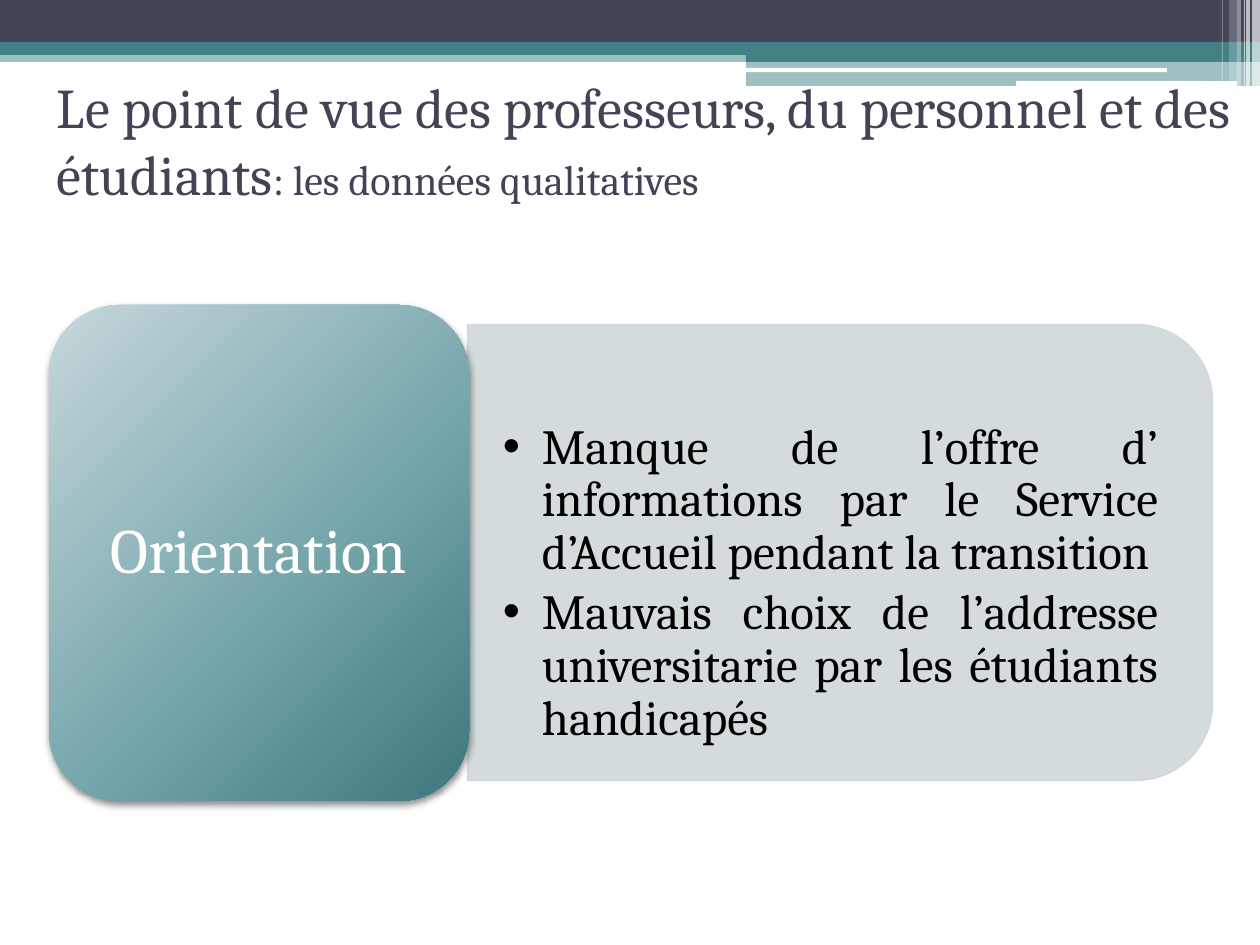
from pptx import Presentation
from pptx.dml.color import RGBColor
from pptx.enum.shapes import MSO_SHAPE as Shape
from pptx.enum.text import MSO_ANCHOR as Anchor, MSO_AUTO_SIZE as AutoSize, PP_ALIGN as Align
from pptx.oxml import parse_xml
from pptx.oxml.ns import nsdecls, qn
from pptx.util import Emu, Pt
from lxml.etree import SubElement

EMU_PER_PX = 914400 / 126
FONT = "Cambria"
NAVY = RGBColor(0x42, 0x44, 0x56)
TEAL = RGBColor(0x43, 0x80, 0x86)
MIST = RGBColor(0xCF, 0xD8, 0xD9)
WHITE = RGBColor(0xFF, 0xFF, 0xFF)
BLACK = RGBColor(0, 0, 0)

TITLE = [("Le point de vue des professeurs, du personnel et des étudiants", 32),
         (": les données qualitatives", 24)]
TOPIC = "Orientation"
FINDINGS = ["Manque de l’offre d’ informations par le Service d’Accueil pendant la transition",
            "Mauvais choix de l’addresse universitarie par les étudiants handicapés"]

# box in px, colour, opacity in percent
BANDS = [((0, 50, 1260, 12), TEAL, 50),
         ((0, 0, 1260, 42), NAVY, 100),
         ((0, 42, 1260, 13), TEAL, 100),
         ((746, 49, 514, 13), TEAL, 100),
         ((746, 61, 514, 25), TEAL, 50)]
RULES = [(745, 68, 422, 4), (1016, 81, 221, 5)]
# left, width, height in px, opacity in percent
STRIPES = [(1252, 8, 86, 65), (1246, 4, 86, 65), (1244, 1, 86, 60),
           (1237, 4, 86, 40), (1229, 8, 81, 20), (1222, 1, 81, 30)]
CARD_STOPS = [(0, "C7D7DA"), (55, "77A7AD"), (100, "3E777D")]


def px(length):
    return Emu(round(length * EMU_PER_PX))


def place(item, box):
    item.left, item.top, item.width, item.height = map(px, box)


def set_opacity(color_format, percent):
    """Add an alpha value to the solid colour inside a fill element."""
    color = color_format.find(".//" + qn("a:srgbClr"))
    SubElement(color, qn("a:alpha")).set("val", str(percent * 1000))


def add_block(shapes, preset, box, color, opacity=100):
    block = shapes.add_shape(preset, *map(px, box))
    block.shadow.inherit = False
    block.fill.solid()
    block.fill.fore_color.rgb = color
    if opacity < 100:
        set_opacity(block._element.spPr.find(qn("a:solidFill")), opacity)
    block.line.fill.background()
    return block


def set_frame(frame, side, top):
    frame.word_wrap = True
    frame.auto_size = AutoSize.NONE
    frame.vertical_anchor = Anchor.MIDDLE
    frame.margin_left = frame.margin_right = px(side)
    frame.margin_top = frame.margin_bottom = px(top)


def add_run(paragraph, text, size, color):
    run = paragraph.add_run()
    run.text = text
    run.font.name = FONT
    run.font.size = Pt(size)
    run.font.color.rgb = color


def add_header(shapes):
    for box, color, opacity in BANDS:
        add_block(shapes, Shape.RECTANGLE, box, color, opacity)
    for box in RULES:
        add_block(shapes, Shape.ROUNDED_RECTANGLE, box, WHITE)
    for left, width, height, opacity in STRIPES:
        add_block(shapes, Shape.RECTANGLE, (left, 0, width, height), WHITE, opacity)


def fill_title(shapes):
    title = shapes.title
    place(title, (44, 66, 1216, 147))
    set_frame(title.text_frame, 13, 6)
    heading = title.text_frame.paragraphs[0]
    heading.alignment = Align.LEFT
    for text, size in TITLE:
        add_run(heading, text, size, NAVY)
    shapes._spTree.append(title._element)


def add_findings(shapes, body):
    panel = add_block(shapes, Shape.ROUND_2_SAME_RECTANGLE, (612, 180, 456, 745), MIST, 90)
    panel.rotation = 90
    panel.line.color.rgb = MIST
    panel.line.width = Pt(0.75)
    set_opacity(panel.line._ln, 90)

    place(body, (469, 378, 723, 412))
    set_frame(body.text_frame, 34, 18)
    for index, text in enumerate(FINDINGS):
        frame = body.text_frame
        item = frame.add_paragraph() if index else frame.paragraphs[0]
        item.alignment = Align.JUSTIFY
        item.line_spacing = 0.9
        item.space_before = Pt(0)
        item.space_after = Pt(4)
        properties = item._p.get_or_add_pPr()
        properties.set("marL", str(px(39)))
        properties.set("indent", str(px(-39)))
        SubElement(properties, qn("a:buChar")).set("char", "•")
        add_run(item, text, 28, BLACK)
    shapes._spTree.append(body._element)


def add_topic_card(shapes):
    card = add_block(shapes, Shape.ROUNDED_RECTANGLE, (49, 305, 420, 496), TEAL)
    stops = "".join(f'<a:gs pos="{pos * 1000}"><a:srgbClr val="{color}"/></a:gs>'
                    for pos, color in CARD_STOPS)
    properties = card._element.spPr
    properties.replace(properties.find(qn("a:solidFill")), parse_xml(
        f'<a:gradFill {nsdecls("a")} rotWithShape="1"><a:gsLst>{stops}</a:gsLst>'
        '<a:lin ang="2700000" scaled="0"/></a:gradFill>'))
    properties.find(qn("a:effectLst")).append(parse_xml(
        f'<a:outerShdw {nsdecls("a")} blurRad="{Pt(4)}" dist="{Pt(2)}" dir="5400000" '
        'rotWithShape="0"><a:srgbClr val="000000"><a:alpha val="45000"/></a:srgbClr>'
        '</a:outerShdw>'))
    set_frame(card.text_frame, 19, 9)
    label = card.text_frame.paragraphs[0]
    label.alignment = Align.CENTER
    label.line_spacing = 0.9
    add_run(label, TOPIC, 36, WHITE)


def main():
    deck = Presentation()
    deck.slide_width, deck.slide_height = px(1260), px(945)
    slide = deck.slides.add_slide(deck.slide_layouts[1])
    add_header(slide.shapes)
    fill_title(slide.shapes)
    add_findings(slide.shapes, slide.placeholders[1])
    add_topic_card(slide.shapes)
    deck.save("out.pptx")


if __name__ == "__main__":
    main()
